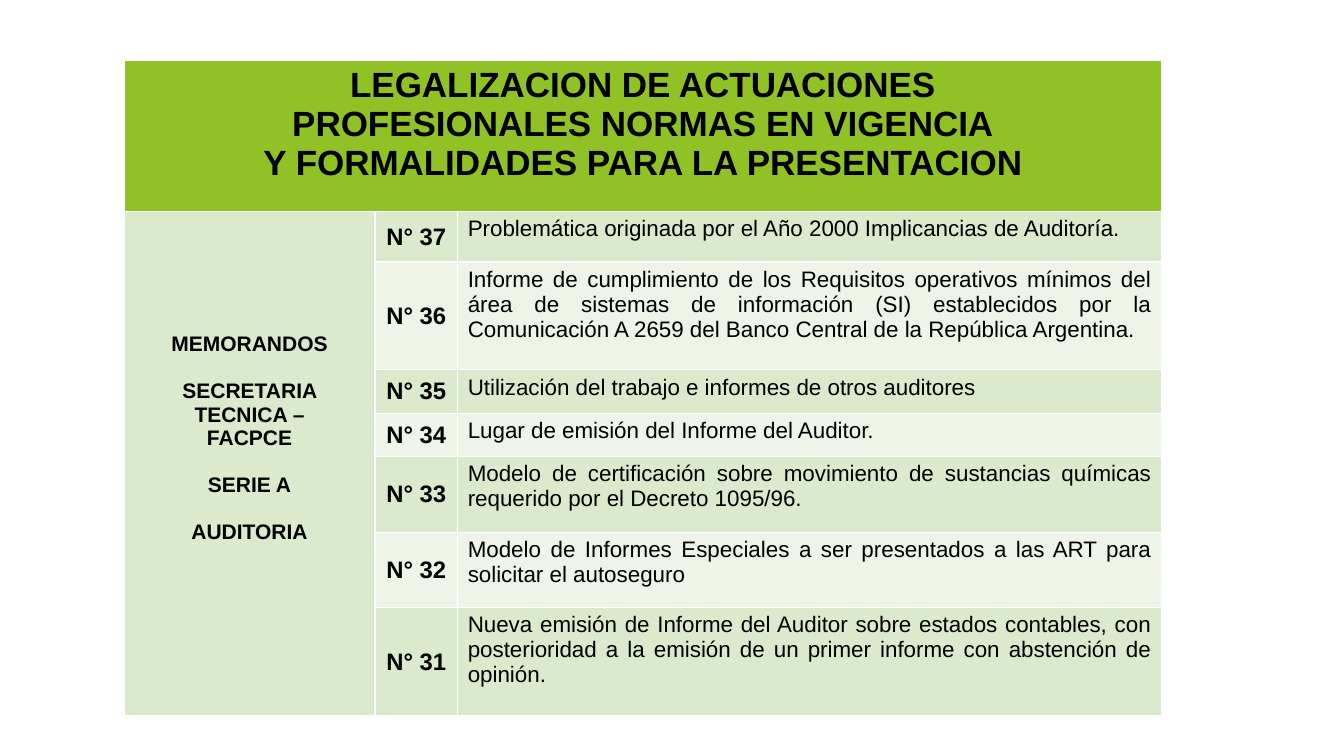
from dataclasses import dataclass

from pptx import Presentation
from pptx.dml.color import RGBColor
from pptx.enum.text import MSO_ANCHOR, PP_ALIGN
from pptx.util import Pt

CENTER, JUSTIFY = PP_ALIGN.CENTER, PP_ALIGN.JUSTIFY
TOP, MIDDLE = MSO_ANCHOR.TOP, MSO_ANCHOR.MIDDLE
PX = 9144  # EMU per px, 100 px to the inch


@dataclass(frozen=True)
class Theme:
    font: str = "Arial"
    ink: str = "000000"
    head: str = "90C226"
    bands: tuple = ("DBE9CD", "EEF4E8")
    head_size: int = 25
    side_size: int = 15
    num_size: int = 17
    body_size: int = 16


TITLE = [
    "LEGALIZACION DE ACTUACIONES",
    "PROFESIONALES NORMAS EN VIGENCIA",
    "Y FORMALIDADES PARA LA PRESENTACION",
]
SERIES = ["MEMORANDOS", "SECRETARIA TECNICA –", "FACPCE", "SERIE A", "AUDITORIA"]
SERIES_GAPS = [0, 17, 0, 17, 17]
# number, subject, row height in px
MEMOS = [
    (37, "Problemática originada por el Año 2000 Implicancias de Auditoría.", 50),
    (36, "Informe de cumplimiento de los Requisitos operativos mínimos del área "
         "de sistemas de información (SI) establecidos por la Comunicación A 2659 "
         "del Banco Central de la República Argentina.", 107),
    (35, "Utilización del trabajo e informes de otros auditores", 43),
    (34, "Lugar de emisión del Informe del Auditor.", 43),
    (33, "Modelo de certificación sobre movimiento de sustancias químicas "
         "requerido por el Decreto 1095/96.", 75),
    (32, "Modelo de Informes Especiales a ser presentados a las ART para "
         "solicitar el autoseguro", 75),
    (31, "Nueva emisión de Informe del Auditor sobre estados contables, con "
         "posterioridad a la emisión de un primer informe con abstención de "
         "opinión.", 107),
]
HEAD_HIGH = 150
COLS = [249, 82, 698]


class Deck:
    def __init__(self, theme, wide, high):
        self.theme = theme
        self.prs = Presentation()
        self.prs.slide_width, self.prs.slide_height = wide * PX, high * PX
        self.slide = self.prs.slides.add_slide(self.prs.slide_layouts[6])

    def table(self, left, top, cols, rows):
        frame = self.slide.shapes.add_table(
            len(rows), len(cols), left * PX, top * PX, sum(cols) * PX, sum(rows) * PX)
        grid = frame.table
        for col, wide in zip(grid.columns, cols):
            col.width = wide * PX
        for row, high in zip(grid.rows, rows):
            row.height = high * PX
        return grid

    def cell(self, cell, lines, size, fill, bold=True, align=CENTER, anchor=TOP,
             gaps=None):
        """Fill a cell with one paragraph per line; gaps are points before each."""
        cell.fill.solid()
        cell.fill.fore_color.rgb = RGBColor.from_string(fill)
        cell.vertical_anchor = anchor
        cell.text_frame.text = "\n".join(lines)
        for i, para in enumerate(cell.text_frame.paragraphs):
            para.alignment = align
            if gaps and gaps[i]:
                para.space_before = Pt(gaps[i])
            for run in para.runs:
                font = run.font
                font.name, font.size, font.bold = self.theme.font, Pt(size), bold
                font.color.rgb = RGBColor.from_string(self.theme.ink)


def main():
    theme = Theme()
    deck = Deck(theme, 1333, 750)
    grid = deck.table(123, 60, COLS, [HEAD_HIGH] + [high for *_, high in MEMOS])

    title = grid.cell(0, 0)
    title.merge(grid.cell(0, len(COLS) - 1))
    deck.cell(title, TITLE, theme.head_size, theme.head)

    side = grid.cell(1, 0)
    side.merge(grid.cell(len(MEMOS), 0))
    deck.cell(side, SERIES, theme.side_size, theme.bands[0], gaps=SERIES_GAPS)
    side.margin_top = 120 * PX

    for i, (num, text, _) in enumerate(MEMOS):
        band = theme.bands[i % 2]
        deck.cell(grid.cell(i + 1, 1), [f"N° {num}"], theme.num_size, band,
                  anchor=MIDDLE)
        deck.cell(grid.cell(i + 1, 2), [text], theme.body_size, band, bold=False,
                  align=JUSTIFY)

    deck.prs.save("out.pptx")


if __name__ == "__main__":
    main()
